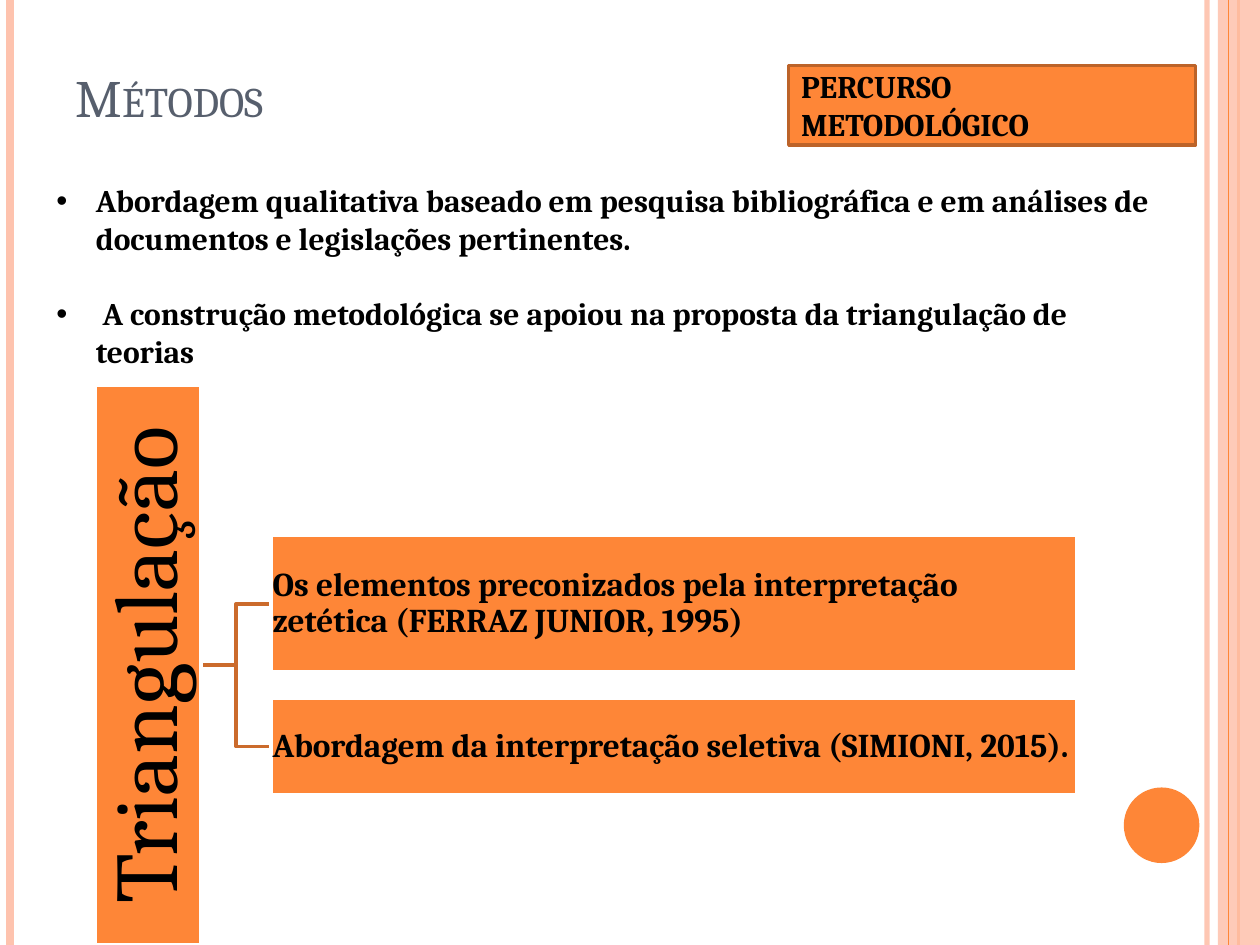
from lxml import etree
from pptx import Presentation
from pptx.dml.color import RGBColor
from pptx.enum.shapes import MSO_CONNECTOR, MSO_SHAPE
from pptx.enum.text import MSO_ANCHOR, MSO_AUTO_SIZE, PP_ALIGN
from pptx.oxml.ns import qn
from pptx.util import Pt

ORANGE = RGBColor(0xFE, 0x86, 0x37)
PEACH = RGBColor(0xFE, 0xC3, 0xAE)
RUST = RGBColor(0xBC, 0x63, 0x29)
BROWN = RGBColor(0xCB, 0x6B, 0x2C)
SLATE = RGBColor(0x57, 0x5F, 0x6D)
BLACK = RGBColor(0, 0, 0)
WHITE = RGBColor(0xFF, 0xFF, 0xFF)

RECT = MSO_SHAPE.RECTANGLE
OVAL = MSO_SHAPE.OVAL
STRAIGHT = MSO_CONNECTOR.STRAIGHT
MIDDLE = MSO_ANCHOR.MIDDLE
BOTTOM = MSO_ANCHOR.BOTTOM
LEFT = PP_ALIGN.LEFT
CENTER = PP_ALIGN.CENTER
NO_FIT = MSO_AUTO_SIZE.NONE

FONT = "Cambria"
HIGH = 540
BAR_X, BAR_W = 54.5, 60.5
BAR_Y, BAR_H = 220, 320
BOX_X, BOX_W = 154.8, 460.8
FORK_X = BAR_X + BAR_W
FORK_Y = BAR_Y + BAR_H / 2

RAILS = [
    (689.8, PEACH, 3, 93),
    (5.8, PEACH, 4.5, 100),
    (707.8, ORANGE, 1.5, 100),
    (702, ORANGE, 0.75, 100),
]
POINTS = [
    "Abordagem qualitativa baseado em pesquisa bibliográfica e em análises de "
    "documentos e legislações pertinentes.",
    " A construção metodológica se apoiou na proposta da triangulação de teorias",
]
BOXES = [
    (306, 78, "Os elementos preconizados pela interpretação zetética "
              "(FERRAZ JUNIOR, 1995)"),
    (398.9, 55.4, "Abordagem da interpretação seletiva (SIMIONI, 2015)."),
]


def style(para, size, color=BLACK, bold=False, align=LEFT):
    para.alignment = align
    for run in para.runs:
        font = run.font
        font.name = FONT
        font.size = Pt(size)
        font.bold = bold
        font.color.rgb = color


def fade(node, share):
    for color in node.iter(qn("a:srgbClr")):
        etree.SubElement(color, qn("a:alpha"), val=str(share * 1000))


def add_rail(slide, x, color, width, share):
    rail = slide.shapes.add_connector(STRAIGHT, Pt(x), 0, Pt(x), Pt(HIGH))
    rail.line.color.rgb = color
    rail.line.width = Pt(width)
    props = rail._element.spPr
    if share < 100:
        fade(props, share)
    etree.SubElement(props, qn("a:effectLst"))


def add_block(slide, kind, x, y, w, h, fill, edge=None):
    block = slide.shapes.add_shape(kind, Pt(x), Pt(y), Pt(w), Pt(h))
    block.shadow.inherit = False
    block.fill.solid()
    block.fill.fore_color.rgb = fill
    if edge is None:
        block.line.fill.background()
    else:
        block.line.color.rgb = edge
        block.line.width = Pt(2)
    return block


def add_label(block, text, size, bold=True, align=LEFT, inset=None, space=1):
    frame = block.text_frame
    frame.word_wrap = True
    frame.vertical_anchor = MIDDLE
    if inset is not None:
        frame.margin_left = frame.margin_right = Pt(inset)
        frame.margin_top = frame.margin_bottom = Pt(inset)
    frame.text = text
    para = frame.paragraphs[0]
    para.line_spacing = space
    style(para, size, bold=bold, align=align)


def add_fork(slide, y):
    mid = (FORK_X + BOX_X) / 2
    pen = slide.shapes.build_freeform(Pt(FORK_X), Pt(FORK_Y))
    turns = [(mid, FORK_Y), (mid, y), (BOX_X, y)]
    pen.add_line_segments([(Pt(a), Pt(b)) for a, b in turns], close=False)
    fork = pen.convert_to_shape()
    fork.shadow.inherit = False
    fork.fill.background()
    fork.line.color.rgb = BROWN
    fork.line.width = Pt(2)


def add_list(slide, items):
    box = slide.shapes.add_textbox(Pt(25.2), Pt(100), Pt(640.8), Pt(116.6))
    frame = box.text_frame
    frame.word_wrap = True
    frame.text = "\n".join(items)
    for i, para in enumerate(frame.paragraphs):
        style(para, 18, bold=True)
        para.space_before = Pt(21.5 * i)
        props = para._p.get_or_add_pPr()
        props.set("marL", str(Pt(22.5)))
        props.set("indent", str(-Pt(22.5)))
        etree.SubElement(props, qn("a:buFont"), typeface="Arial")
        etree.SubElement(props, qn("a:buChar"), char="•")


def set_title(slide, text):
    title = slide.shapes.title
    title.left, title.top = Pt(36), Pt(21.6)
    title.width, title.height = Pt(588), Pt(55.4)
    frame = title.text_frame
    frame.auto_size = NO_FIT
    frame.vertical_anchor = BOTTOM
    frame.text = text
    para = frame.paragraphs[0]
    style(para, 30, SLATE)
    para.runs[0].font._element.set("cap", "small")


def add_frame(slide):
    for rail in RAILS[:3]:
        add_rail(slide, *rail)
    band = add_block(slide, RECT, 696, 0, 24, HIGH, PEACH)
    fade(band._element.spPr, 87)
    add_rail(slide, *RAILS[3])
    add_block(slide, OVAL, 642.2, 450, 43.2, 43.2, ORANGE)


def add_tree(slide):
    for y, h, text in BOXES:
        add_fork(slide, y + h / 2)
    x = BAR_X + (BAR_W - BAR_H) / 2
    bar = add_block(slide, RECT, x, FORK_Y - BAR_W / 2, BAR_H, BAR_W,
                    ORANGE, WHITE)
    bar.rotation = 270
    add_label(bar, "Triangulação", 51, False, CENTER, 3, 0.9)
    for y, h, text in BOXES:
        box = add_block(slide, RECT, BOX_X, y, BOX_W, h, ORANGE, WHITE)
        add_label(box, text, 19, inset=1, space=0.9)


def main():
    deck = Presentation()
    deck.slide_width, deck.slide_height = Pt(720), Pt(HIGH)
    slide = deck.slides.add_slide(deck.slide_layouts[5])
    add_frame(slide)
    set_title(slide, "Métodos")
    tag = add_block(slide, RECT, 450.7, 37.4, 232.5, 45.4, ORANGE, RUST)
    add_label(tag, "PERCURSO METODOLÓGICO", 18)
    add_list(slide, POINTS)
    add_tree(slide)
    deck.save("out.pptx")


if __name__ == "__main__":
    main()
